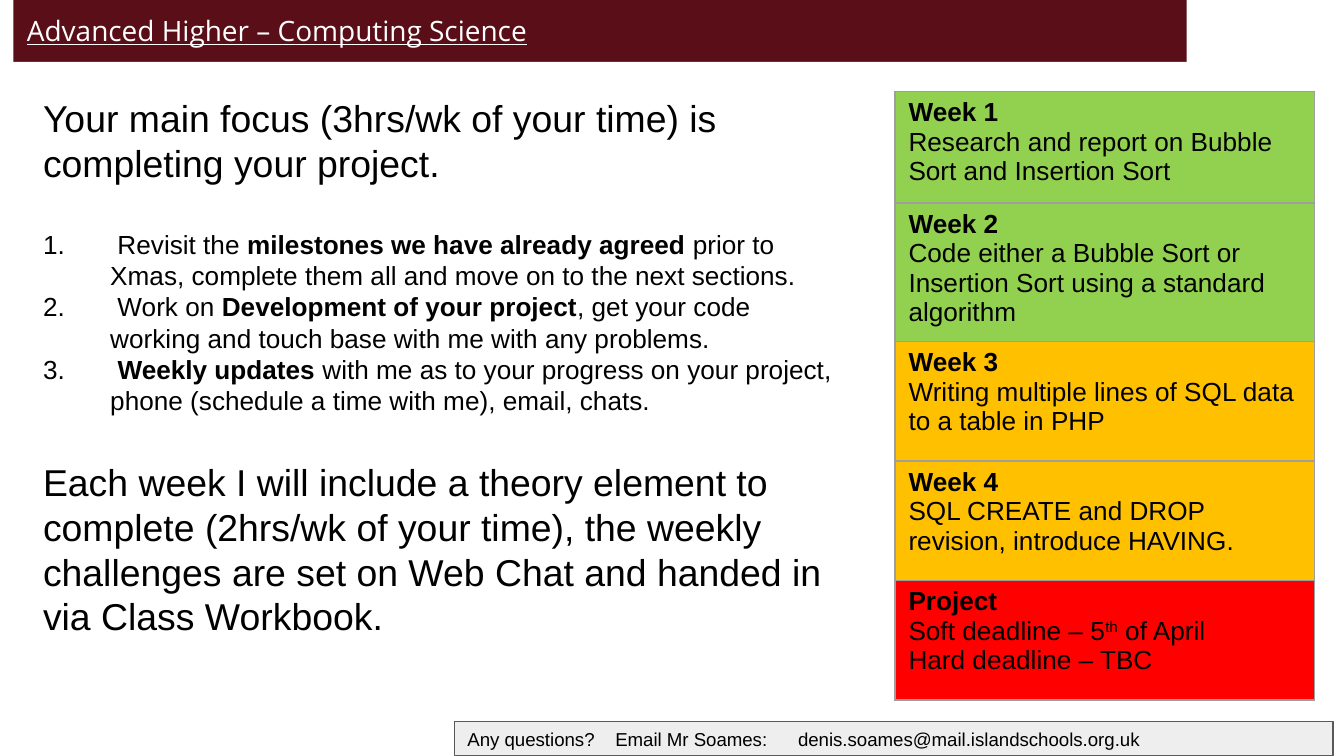
import lxml.etree
import pptx
import pptx.dml.color
import pptx.enum.shapes
import pptx.enum.text
import pptx.oxml.ns
import pptx.util

WIDTH = 10
HEIGHT = WIDTH * 9 / 16
TITLE = "Advanced Higher – Computing Science"
BODY = [
    ("lead", 0, [("Your main focus (3hrs/wk of your time) is completing your project.", {})]),
    ("item", 23, [(" Revisit the ", {}), ("milestones we have already agreed ", {"bold": True}),
                  ("prior to Xmas, complete them all and move on to the next sections.", {})]),
    ("item", 0, [(" Work on ", {}), ("Development of your project", {"bold": True}),
                 (", get your code working and touch base with me with any problems.", {})]),
    ("item", 0, [(" ", {}), ("Weekly updates ", {"bold": True}),
                 ("with me as to your progress on your project, phone (schedule a time with me), "
                  "email, chats.", {})]),
    ("lead", 23, [("Each week I will include a theory element to complete (2hrs/wk of your time), "
                   "the weekly challenges are set on Web Chat and handed in via Class Workbook.", {})]),
]
BODY_SIZES = {"lead": 20, "item": 14}
WEEKS = [
    ("Week 1", [[("Research and report on Bubble Sort and Insertion Sort", 0)]], "92D050", 0.83),
    ("Week 2", [[("Code either a Bubble Sort or Insertion Sort using a standard algorithm", 0)]],
     "92D050", 1.03),
    ("Week 3", [[("Writing multiple lines of SQL data to a table in PHP", 0)]], "FFC000", 0.89),
    ("Week 4", [[("SQL CREATE and DROP revision, introduce HAVING.", 0)]], "FFC000", 0.89),
    ("Project", [[("Soft deadline – 5", 0), ("th", 30000), (" of April", 0)],
                 [("Hard deadline – TBC", 0)]], "FF0000", 0.89),
]
CONTACT = "Any questions?\tEmail Mr Soames:\tdenis.soames@mail.islandschools.org.uk"
CONTACT_TABS = (1.1, 2.46)


def inches(*values):
    return [pptx.util.Inches(value) for value in values]


def color(value):
    return pptx.dml.color.RGBColor.from_string(value)


def set_values(target, values):
    for name, value in values.items():
        setattr(target, name, value)


def place(shape, left, top, width, height):
    set_values(shape, dict(zip(("left", "top", "width", "height"), inches(left, top, width, height))))


def fill(target, value):
    target.fill.solid()
    target.fill.fore_color.rgb = color(value)


def add_xml(parent, tag, position=None, **attributes):
    element = lxml.etree.Element(pptx.oxml.ns.qn(tag), attributes)
    parent.insert(len(parent) if position is None else position, element)
    return element


def add_run(paragraph, text, size, font="Arial", ink="000000", **values):
    run = paragraph.add_run()
    run.text = text
    set_values(run.font, {"name": font, "size": pptx.util.Pt(size), **values})
    run.font.color.rgb = color(ink)
    return run


def frame_text(shape, anchor, margin_y):
    margin, edge = inches(0.1, margin_y)
    set_values(shape.text_frame, {
        "word_wrap": True, "auto_size": pptx.enum.text.MSO_AUTO_SIZE.NONE,
        "vertical_anchor": anchor, "margin_left": margin, "margin_right": margin,
        "margin_top": edge, "margin_bottom": edge})
    paragraph = shape.text_frame.paragraphs[0]
    paragraph.alignment = pptx.enum.text.PP_ALIGN.LEFT
    return paragraph


def add_rectangle(slide, shade, *bounds):
    rectangle = slide.shapes.add_shape(pptx.enum.shapes.MSO_SHAPE.RECTANGLE, *inches(*bounds))
    rectangle.shadow.inherit = False
    fill(rectangle, shade)
    rectangle.line.fill.background()
    return rectangle


def add_title(slide):
    title = slide.shapes.title
    place(title, 0.1, 0, 8.73, 0.79)
    fill(title, "5A0E18")
    paragraph = frame_text(title, pptx.enum.text.MSO_ANCHOR.TOP, 0.1)
    add_run(paragraph, TITLE, 15, "Open Sans", "FFFFFF", underline=True)
    strip = add_rectangle(slide, "FFFFFF", 0, 0.46, WIDTH, 0.41)
    title._element.addnext(strip._element)


def add_body(slide):
    body = slide.placeholders[1]
    place(body, 0.22, 0.66, 6.15, 4.21)
    paragraph = frame_text(body, pptx.enum.text.MSO_ANCHOR.TOP, 0.05)
    for index, (kind, gap, runs) in enumerate(BODY):
        if index:
            paragraph = body.text_frame.add_paragraph()
        set_values(paragraph, {"line_spacing": 1.0, "space_before": pptx.util.Pt(gap),
                               "space_after": pptx.util.Pt(0)})
        properties = paragraph._p.get_or_add_pPr()
        indent = pptx.util.Inches(0.5 if kind == "item" else 0)
        properties.set("marL", str(indent))
        properties.set("indent", str(-indent))
        if kind == "item":
            add_xml(add_xml(properties, "a:buClr"), "a:srgbClr", val="000000")
            add_xml(properties, "a:buFont", typeface="Arial")
            add_xml(properties, "a:buAutoNum", type="arabicPeriod")
        else:
            add_xml(properties, "a:buNone")
        for text, values in runs:
            add_run(paragraph, text, BODY_SIZES[kind], **values)


def add_border(cell):
    properties = cell._tc.get_or_add_tcPr()
    for position, side in enumerate(("a:lnL", "a:lnR", "a:lnT", "a:lnB")):
        line = add_xml(properties, side, position, w=str(pptx.util.Pt(0.75)))
        add_xml(add_xml(line, "a:solidFill"), "a:srgbClr", val="9E9E9E")


def add_weeks(slide):
    total = sum(week[3] for week in WEEKS)
    table = slide.shapes.add_table(len(WEEKS), 1, *inches(6.66, 0.68, 3.12, total)).table
    set_values(table, {"first_row": False, "horz_banding": False})
    for index, (heading, lines, shade, height) in enumerate(WEEKS):
        table.rows[index].height = pptx.util.Inches(height)
        cell = table.cell(index, 0)
        fill(cell, shade)
        add_border(cell)
        add_run(cell.text_frame.paragraphs[0], heading, 14, bold=True)
        for line in lines:
            paragraph = cell.text_frame.add_paragraph()
            for text, baseline in line:
                run = add_run(paragraph, text, 14, bold=False)
                if baseline:
                    run._r.get_or_add_rPr().set("baseline", str(baseline))


def add_contact(slide):
    box = add_rectangle(slide, "EEEEEE", 3.38, 5.37, 6.54, 0.25)
    box.line.color.rgb = color("595959")
    box.line.width = pptx.util.Pt(0.75)
    paragraph = frame_text(box, pptx.enum.text.MSO_ANCHOR.MIDDLE, 0.1)
    stops = add_xml(paragraph._p.get_or_add_pPr(), "a:tabLst")
    for stop in inches(*CONTACT_TABS):
        add_xml(stops, "a:tab", pos=str(stop), algn="l")
    add_run(paragraph, CONTACT, 10)


def main():
    presentation = pptx.Presentation()
    presentation.slide_width, presentation.slide_height = inches(WIDTH, HEIGHT)
    slide = presentation.slides.add_slide(presentation.slide_layouts[1])
    for add_part in (add_title, add_contact, add_body, add_weeks):
        add_part(slide)
    presentation.save("out.pptx")


if __name__ == "__main__":
    main()
